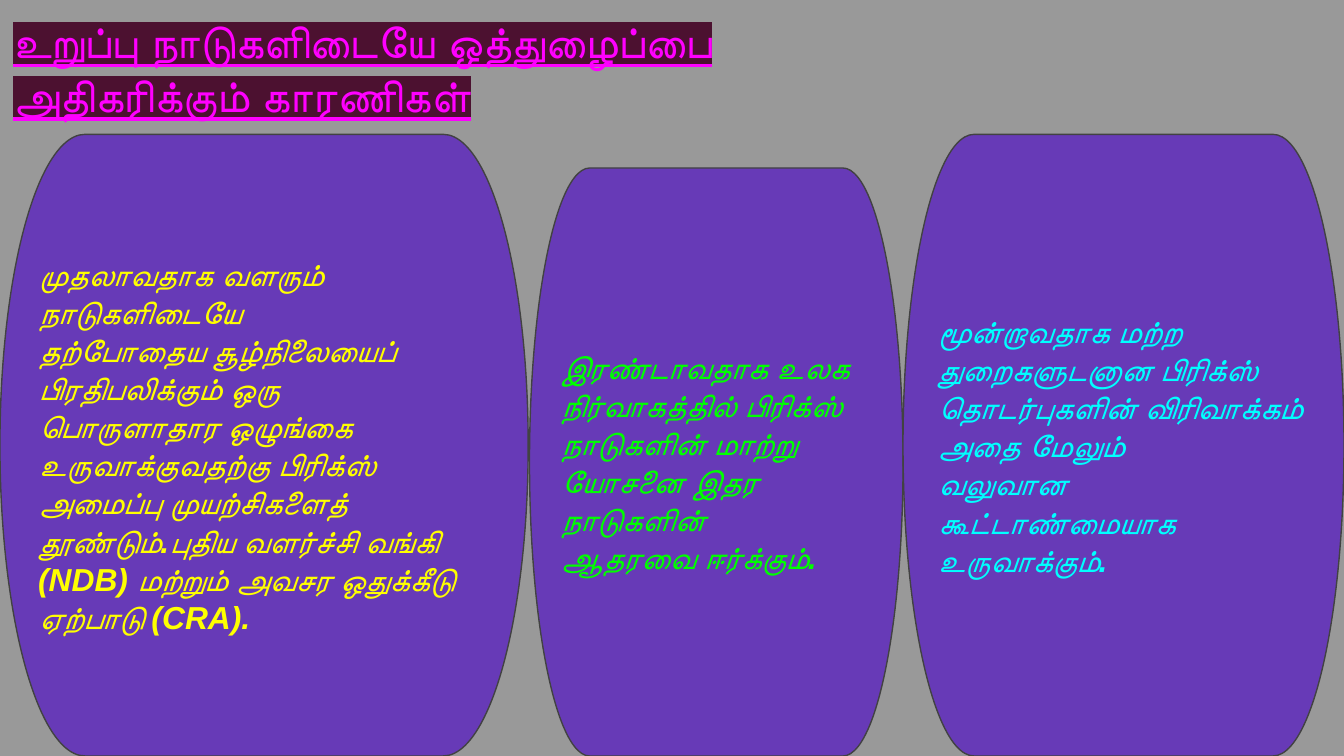
from pptx import Presentation
from pptx.dml.color import RGBColor
from pptx.enum.shapes import MSO_SHAPE
from pptx.enum.text import MSO_ANCHOR, MSO_AUTO_SIZE, PP_ALIGN
from pptx.oxml import parse_xml
from pptx.oxml.ns import nsdecls, qn
from pptx.util import Pt

PILL = MSO_SHAPE.FLOWCHART_TERMINATOR
TOP, MIDDLE = MSO_ANCHOR.TOP, MSO_ANCHOR.MIDDLE
LEFT = PP_ALIGN.LEFT
NO_FIT = MSO_AUTO_SIZE.NONE

GREY = RGBColor(0x99, 0x99, 0x99)
PURPLE = RGBColor(0x67, 0x3A, 0xB7)
DARK = RGBColor(0x42, 0x42, 0x42)
PINK = RGBColor(0xFF, 0x00, 0xFF)
WINE = RGBColor(0x4C, 0x11, 0x30)
YELLOW = RGBColor(0xFF, 0xFF, 0x00)
GREEN = RGBColor(0x00, 0xFF, 0x00)
CYAN = RGBColor(0x00, 0xFF, 0xFF)

WIDTH, HEIGHT = 720, 405

TITLE = [
    "உறுப்பு நாடுகளிடையே ஒத்துழைப்பை",
    "அதிகரிக்கும் காரணிகள்",
]
CAUSES = [
    (0, 72, 283, YELLOW, [
        "முதலாவதாக வளரும் நாடுகளிடையே",
        "தற்போதைய சூழ்நிலையைப் பிரதிபலிக்கும் ஒரு",
        "பொருளாதார ஒழுங்கை உருவாக்குவதற்கு பிரிக்ஸ் அமைப்பு முயற்சிகளைத் "
        "தூண்டும்.புதிய வளர்ச்சி வங்கி (NDB) மற்றும் அவசர ஒதுக்கீடு ஏற்பாடு (CRA).",
    ]),
    (283.7, 90, 200.1, GREEN, [
        "இரண்டாவதாக உலக நிர்வாகத்தில் பிரிக்ஸ்",
        "நாடுகளின் மாற்று யோசனை இதர நாடுகளின்",
        "ஆதரவை ஈர்க்கும்.",
    ]),
    (483.8, 72, 236.2, CYAN, [
        "மூன்றாவதாக மற்ற துறைகளுடனான பிரிக்ஸ்",
        "தொடர்புகளின் விரிவாக்கம் அதை மேலும்",
        "வலுவான கூட்டாண்மையாக உருவாக்கும்.",
    ]),
]


class Painter:
    head = {"size": Pt(24), "bold": True, "underline": True}
    body = {"size": Pt(17), "bold": True, "italic": True}
    frame = {"word_wrap": True, "auto_size": NO_FIT}
    inset = Pt(7.2)

    def __init__(self, slide):
        self.slide = slide
        fill = slide.background.fill
        fill.solid()
        fill.fore_color.rgb = GREY

    def label(self, shape, lines, style, color, anchor, mark=None):
        frame = shape.text_frame
        sides = ("left", "top", "right", "bottom")
        margins = {f"margin_{side}": self.inset for side in sides}
        for name, value in {**self.frame, **margins}.items():
            setattr(frame, name, value)
        frame.vertical_anchor = anchor
        frame.text = "\n".join(lines)
        for para in frame.paragraphs:
            para.alignment = LEFT
            font = para.runs[0].font
            for name, value in {**style, "name": "Arial"}.items():
                setattr(font, name, value)
            font.color.rgb = color
            if mark is not None:
                self.mark(para.runs[0], mark)

    def mark(self, run, color):
        tag = parse_xml(
            f'<a:highlight {nsdecls("a")}><a:srgbClr val="{color}"/></a:highlight>'
        )
        run._r.rPr.find(qn("a:solidFill")).addnext(tag)

    def title(self, lines):
        shape = self.slide.shapes.title
        box = {"left": 0, "top": 0, "width": Pt(702), "height": Pt(72)}
        for name, value in box.items():
            setattr(shape, name, value)
        self.label(shape, lines, self.head, PINK, TOP, WINE)

    def pill(self, left, top, width, color, lines):
        shape = self.slide.shapes.add_shape(
            PILL, Pt(left), Pt(top), Pt(width), Pt(HEIGHT - top)
        )
        shape.shadow.inherit = False
        shape.fill.solid()
        shape.fill.fore_color.rgb = PURPLE
        shape.line.color.rgb = DARK
        shape.line.width = Pt(0.75)
        self.label(shape, lines, self.body, color, MIDDLE)


def main():
    deck = Presentation()
    deck.slide_width, deck.slide_height = Pt(WIDTH), Pt(HEIGHT)
    painter = Painter(deck.slides.add_slide(deck.slide_layouts[5]))
    painter.title(TITLE)
    for cause in CAUSES:
        painter.pill(*cause)
    deck.save("out.pptx")


if __name__ == "__main__":
    main()
